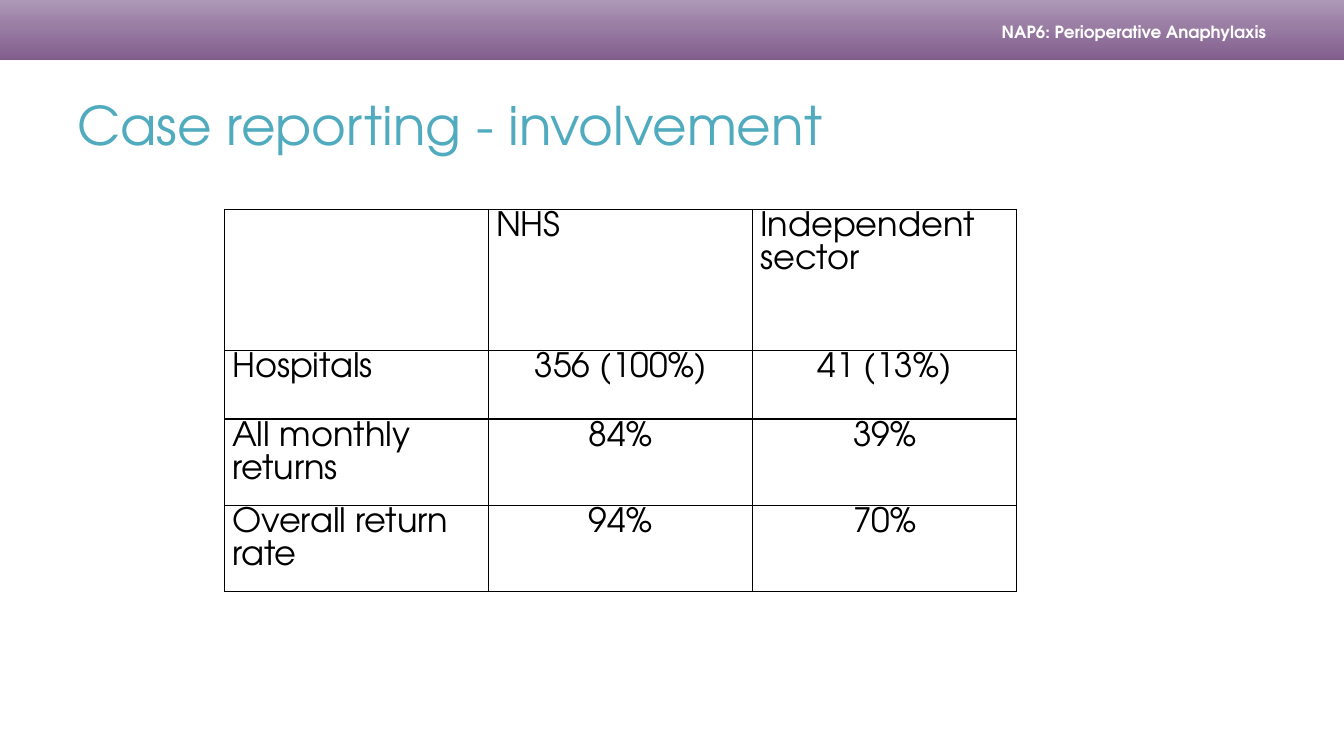
from lxml import etree
from pptx import Presentation
from pptx.dml.color import RGBColor
from pptx.enum import shapes, text
from pptx.oxml import ns, parse_xml
from pptx.util import Pt

FONT = "TeX Gyre Adventor"
COLORS = {
    "band_dark": "815D8D",
    "band_mid": "997DA3",
    "band_light": "AD98B6",
    "header": "FFFFFF",
    "title": "50ABBF",
    "table": "000000",
}


def add_run(paragraph, wording, size, color, bold=False):
    run = paragraph.add_run()
    run.text = wording
    run.font.name = FONT
    run.font.size = Pt(size)
    run.font.bold = bold
    run.font.color.rgb = RGBColor.from_string(COLORS[color])


def add_label(left, top, width, height):
    frame = slide.shapes.add_textbox(Pt(left), Pt(top), Pt(width), Pt(height)).text_frame
    frame.word_wrap = True
    frame.vertical_anchor = text.MSO_ANCHOR.MIDDLE
    return frame


deck = Presentation()
deck.slide_width, deck.slide_height = Pt(960), Pt(540)
slide = deck.slides.add_slide(deck.slide_layouts[6])

# Header band, dark at the bottom
band = slide.shapes.add_shape(shapes.MSO_SHAPE.RECTANGLE, 0, 0, Pt(960), Pt(43))
band.shadow.inherit = False
band.line.fill.background()
band.fill.gradient()
band.fill.gradient_angle = 90
stops = band.fill.gradient_stops
for stop, color, position in zip(stops, ("band_dark", "band_light"), (0, 1)):
    stop.color.rgb = RGBColor.from_string(COLORS[color])
    stop.position = position
first_stop = band._element.spPr.find(".//" + ns.qn("a:gs"))
first_stop.addnext(parse_xml(
    f'<a:gs {ns.nsdecls("a")} pos="55000"><a:srgbClr val="{COLORS["band_mid"]}"/></a:gs>'))

# Header wording
header = add_label(601, 13, 320.5, 20)
header.margin_right = Pt(17)
header.paragraphs[0].alignment = text.PP_ALIGN.RIGHT
add_run(header.paragraphs[0], "NAP6: Perioperative Anaphylaxis", 12, "header", bold=True)

# Title
title = add_label(48, 43.5, 864, 90)
add_run(title.paragraphs[0], "Case reporting - involvement", 38, "title")

# Involvement table
involvement = [
    ("", "NHS", "Independent sector"),
    ("Hospitals", "356 (100%)", "41 (13%)"),
    ("All monthly returns", "84%", "39%"),
    ("Overall return rate", "94%", "70%"),
]
row_heights = [100.8, 49, 49, 49]
column_width = 188.6
table = slide.shapes.add_table(
    len(involvement), 3, Pt(160.4), Pt(149.5),
    Pt(3 * column_width), Pt(sum(row_heights))).table
table.first_row = table.horz_banding = False
for column in table.columns:
    column.width = Pt(column_width)

for r, (row, height) in enumerate(zip(involvement, row_heights)):
    table.rows[r].height = Pt(height)
    for c, wording in enumerate(row):
        cell = table.cell(r, c)
        cell.margin_left = cell.margin_right = Pt(5.4)
        cell.margin_top = cell.margin_bottom = 0
        paragraph = cell.text_frame.paragraphs[0]
        paragraph.line_spacing = 1.07
        if r and c:
            paragraph.alignment = text.PP_ALIGN.CENTER
        if wording:
            add_run(paragraph, wording, 24, "table")
        # Borders come before the fill in the cell properties
        properties = cell._tc.get_or_add_tcPr()
        for side in ("lnL", "lnR", "lnT", "lnB"):
            border = etree.SubElement(properties, ns.qn("a:" + side), w=str(Pt(1)))
            fill = etree.SubElement(border, ns.qn("a:solidFill"))
            etree.SubElement(fill, ns.qn("a:srgbClr"), val=COLORS["table"])
        cell.fill.background()

deck.save("out.pptx")
